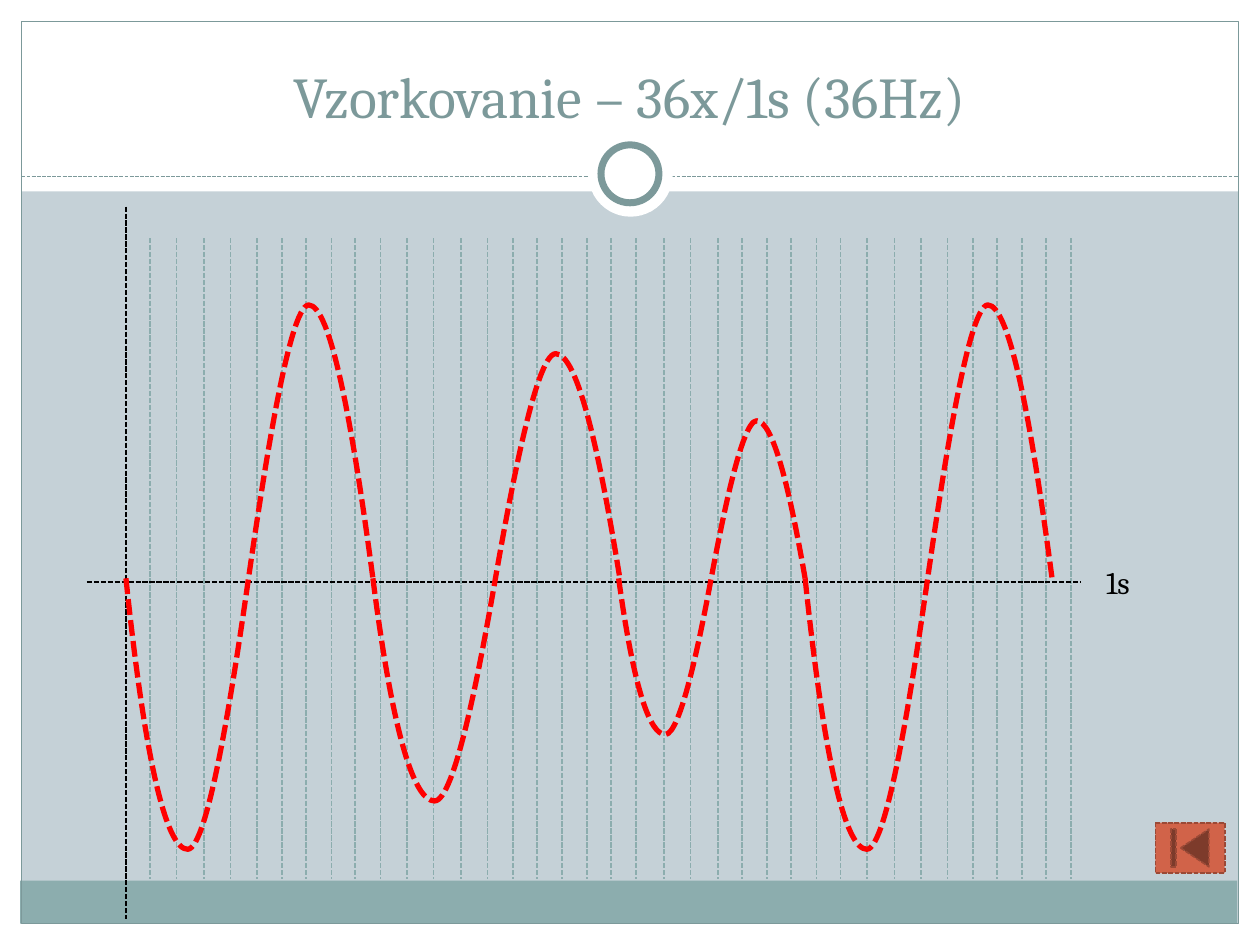
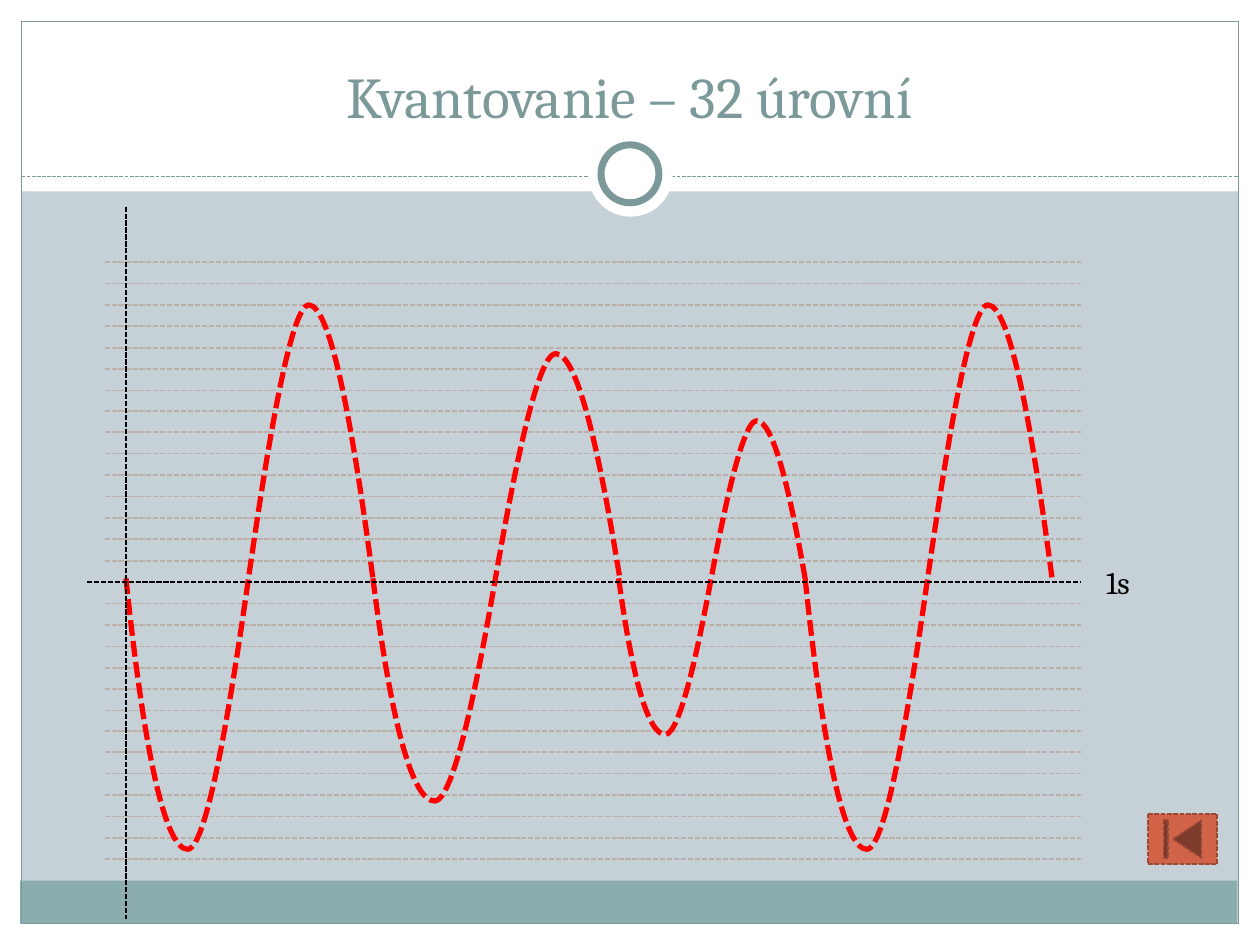
from dataclasses import dataclass
from lxml.etree import SubElement
from pptx import Presentation
from pptx.dml.color import RGBColor
from pptx.enum.dml import MSO_LINE
from pptx.enum.shapes import MSO_CONNECTOR, MSO_SHAPE
from pptx.enum.text import MSO_ANCHOR, MSO_AUTO_SIZE, PP_ALIGN
from pptx.oxml.ns import qn
from pptx.util import Emu, Pt

PX = 9144
WIDTH, HEIGHT = 1000, 750
TITLE_ONLY = 5
FIRST_FRAME_ID = 101


@dataclass(frozen=True)
class Theme:
    font: str = "Cambria"
    title_size: int = 33
    label_size: int = 18
    background: str = "C5D1D7"
    white: str = "FFFFFF"
    black: str = "000000"
    accent: str = "7C999A"
    band: str = "8CADAE"
    level: str = "BAB0A9"
    signal: str = "FF0000"
    button: str = "D16349"
    button_line: str = "9B4936"


BASELINE = 459
AXIS_Y = 462
UNIT_WIDTH, UNIT_HEIGHT = 196, 432
UNIT_WAVE = [
    (0, 0), (16, 153), (33, 215), (49, 215),
    (65, 215), (85, 86), (97, 2),
    (108, -74), (129, -216), (145, -217),
    (162, -217), (179, -128), (196, 0),
]
WAVES = [(100, 196, 432), (296, 196, 355), (491, 148, 249), (639, 196, 432)]
SAMPLE_RUNS = [
    (119, 204, 4), (204, 302, 5), (302, 387, 4), (387, 505, 6),
    (505, 570, 3), (570, 667, 5), (667, 752, 4), (752, 850, 5),
]


def emu(*lengths):
    return [Emu(round(v * PX)) for v in lengths]


def spread(start, end, steps):
    return [round(start + (end - start) * i / steps) for i in range(steps + 1)]


def wave_points(left, width, height):
    return [
        emu(left + x * width / UNIT_WIDTH, BASELINE + y * height / UNIT_HEIGHT)
        for x, y in UNIT_WAVE
    ]


def write(tf, text, *, font, size, color, align=PP_ALIGN.LEFT,
          anchor=MSO_ANCHOR.TOP, wrap=True, fit=MSO_AUTO_SIZE.NONE):
    tf.word_wrap = wrap
    tf.auto_size = fit
    tf.vertical_anchor = anchor
    p = tf.paragraphs[0]
    p.alignment = align
    r = p.add_run()
    r.text = text
    r.font.name = font
    r.font.size = Pt(size)
    r.font.color.rgb = RGBColor.from_string(color)


class Deck:
    def __init__(self, theme):
        self.theme = theme
        self.prs = Presentation()
        self.prs.slide_width, self.prs.slide_height = emu(WIDTH, HEIGHT)
        fill = self.prs.slide_master.background.fill
        fill.solid()
        fill.fore_color.rgb = RGBColor.from_string(theme.background)
        self.layout = self.prs.slide_layouts[TITLE_ONLY]
        self.slide()
        self.move_to_layout(self.frame())

    def slide(self):
        self.s = self.prs.slides.add_slide(self.layout)

    def move_to_layout(self, shapes):
        tree = self.layout.shapes.element
        for i, sp in enumerate(shapes):
            sp.element.xpath(".//p:cNvPr")[0].set("id", str(FIRST_FRAME_ID + i))
            tree.insert(2 + i, sp.element)

    def stroke(self, line, color, width, dashed):
        line.color.rgb = RGBColor.from_string(color)
        line.width = Pt(width)
        if dashed:
            line.dash_style = MSO_LINE.SQUARE_DOT

    def shape(self, kind, box, fill=None, line=None, width=0.75, dashed=False):
        sp = self.s.shapes.add_shape(kind, *emu(*box))
        sp.shadow.inherit = False
        if fill:
            sp.fill.solid()
            sp.fill.fore_color.rgb = RGBColor.from_string(fill)
        else:
            sp.fill.background()
        if line:
            self.stroke(sp.line, line, width, dashed)
        else:
            sp.line.fill.background()
        return sp

    def line(self, start, end, color, width=1):
        cx = self.s.shapes.add_connector(
            MSO_CONNECTOR.STRAIGHT, *emu(*start, *end))
        self.stroke(cx.line, color, width, True)
        SubElement(cx.element.spPr, qn("a:effectLst"))
        return cx

    def group(self, shapes):
        return self.s.shapes.add_group_shape(shapes)

    def curve(self, points):
        fb = self.s.shapes.build_freeform(*points[0], scale=1.0)
        fb.add_line_segments(points[1:], close=False)
        sp = fb.convert_to_shape()
        outline = sp.element.xpath(".//a:path")[0]
        segments = outline.findall(qn("a:lnTo"))
        for k in range(0, len(segments), 3):
            bezier = SubElement(outline, qn("a:cubicBezTo"))
            for segment in segments[k:k + 3]:
                bezier.append(segment[0])
                outline.remove(segment)
        sp.shadow.inherit = False
        sp.fill.background()
        self.stroke(sp.line, self.theme.signal, 3, True)
        return sp

    def frame(self):
        t = self.theme
        borders = [(0, 733, WIDTH, 17), (0, 0, WIDTH, 152),
                   (0, 0, 17, HEIGHT), (983, 0, 17, HEIGHT)]
        return [
            *(self.shape(MSO_SHAPE.RECTANGLE, box, t.white) for box in borders),
            self.shape(MSO_SHAPE.RECTANGLE, (16, 699, 966, 34), t.band),
            self.shape(MSO_SHAPE.RECTANGLE, (17, 17, 966, 716), line=t.accent),
            self.line((17, 140), (983, 140), t.accent, 0.75),
            self.shape(MSO_SHAPE.OVAL, (467, 105, 67, 67), t.white),
            self.shape(MSO_SHAPE.OVAL, (477, 115, 46, 46), t.white, t.accent, 4),
        ]

    def title(self, text):
        t = self.theme
        sp = self.s.shapes.title
        sp.element.getparent().append(sp.element)
        sp.left, sp.top, sp.width, sp.height = emu(33, 25, 933, 83)
        write(sp.text_frame, text, font=t.font, size=t.title_size,
              color=t.accent, align=PP_ALIGN.CENTER, anchor=MSO_ANCHOR.BOTTOM)

    def sample_grid(self):
        xs = sorted({x for run in SAMPLE_RUNS for x in spread(*run)})
        self.group([self.line((x, 189), (x, 698), self.theme.band) for x in xs])

    def level_grid(self):
        ys = [y for y in spread(208, 682, 28) if y != AXIS_Y]
        self.group([self.line((83, y), (858, y), self.theme.level) for y in ys])

    def axes(self):
        return [
            self.line((69, AXIS_Y), (858, AXIS_Y), self.theme.black),
            self.line((100, 164), (100, 729), self.theme.black),
        ]

    def signal(self):
        self.group([self.curve(wave_points(*wave)) for wave in WAVES])

    def time_label(self, text):
        t = self.theme
        tb = self.s.shapes.add_textbox(*emu(868, 442, 43, 40))
        write(tb.text_frame, text, font=t.font, size=t.label_size,
              color=t.black, wrap=False, fit=MSO_AUTO_SIZE.SHAPE_TO_FIT_TEXT)
        return tb

    def back_button(self, left, top):
        t = self.theme
        self.shape(MSO_SHAPE.ACTION_BUTTON_BEGINNING, (left, top, 55, 40),
                   t.button, t.button_line, 0.9, True)


def main():
    deck = Deck(Theme())

    deck.sample_grid()
    deck.axes()
    deck.title("Vzorkovanie – 36x/1s (36Hz)")
    deck.signal()
    deck.time_label("1s")
    deck.back_button(917, 653)

    deck.slide()
    deck.level_grid()
    deck.title("Kvantovanie – 32 úrovní")
    deck.signal()
    deck.group([*deck.axes(), deck.time_label("1s")])
    deck.back_button(911, 646)

    deck.prs.save("out.pptx")


if __name__ == "__main__":
    main()
